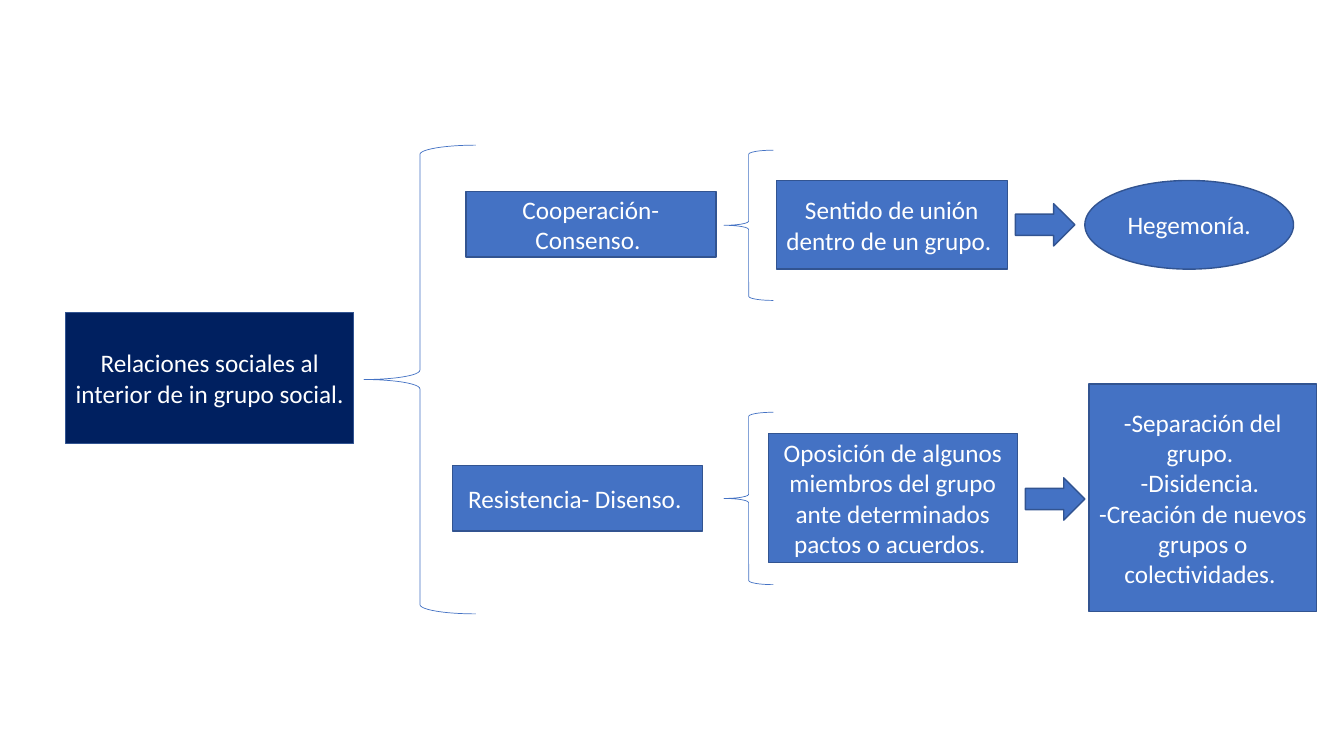
from pptx import Presentation
from pptx.dml.color import RGBColor
from pptx.enum.shapes import MSO_SHAPE
from pptx.enum.text import MSO_ANCHOR, PP_ALIGN
from pptx.util import Pt

PX = 9144
RECT = MSO_SHAPE.RECTANGLE
ELLIPSE = MSO_SHAPE.OVAL
BRACE = MSO_SHAPE.LEFT_BRACE
ARROW = MSO_SHAPE.RIGHT_ARROW
MIDDLE = MSO_ANCHOR.MIDDLE
CENTER = PP_ALIGN.CENTER

NAVY = "002060"
BLUE = "4472C4"
OUTLINE = "325491"
WHITE = "FFFFFF"


def paint(color_format, color):
    color_format.rgb = RGBColor.from_string(color)


def add_figure(slide, kind, box, fill=BLUE, line=OUTLINE, weight=1):
    figure = slide.shapes.add_shape(kind, *(value * PX for value in box))
    figure.shadow.inherit = False
    if fill:
        figure.fill.solid()
        paint(figure.fill.fore_color, fill)
    else:
        figure.fill.background()
    paint(figure.line.color, line)
    figure.line.width = Pt(weight)
    return figure


def write(frame, text, size=18, font="Calibri", color=WHITE, align=CENTER):
    frame.word_wrap = True
    frame.vertical_anchor = MIDDLE
    frame.text = text
    for paragraph in frame.paragraphs:
        paragraph.alignment = align
        paragraph.font.size = Pt(size)
        paragraph.font.name = font
        paint(paragraph.font.color, color)


def add_concept(slide, box, text, kind=RECT, fill=BLUE):
    concept = add_figure(slide, kind, box, fill=fill)
    write(concept.text_frame, text)


def add_brace(slide, box):
    add_figure(slide, BRACE, box, fill=None, line=BLUE, weight=0.5)


def add_arrow(slide, left, top):
    add_figure(slide, ARROW, (left, top, 59, 42))


def main():
    deck = Presentation()
    deck.slide_width = 1333 * PX
    deck.slide_height = 750 * PX
    slide = deck.slides.add_slide(deck.slide_layouts[6])

    add_concept(slide, (65, 310, 286, 130),
                "Relaciones sociales al interior de in grupo social. ", fill=NAVY)
    add_brace(slide, (361, 144, 111, 465))

    add_concept(slide, (462, 190, 248, 65), "Cooperación- Consenso. ")
    add_concept(slide, (449, 462, 248, 65), "Resistencia- Disenso. ")

    add_concept(slide, (770, 179, 229, 88), "Sentido de unión dentro de un grupo. ")
    add_concept(slide, (1076, 179, 207, 88), "Hegemonía. ", kind=ELLIPSE)
    add_brace(slide, (718, 149, 49, 149))
    add_arrow(slide, 1007, 202)

    add_concept(slide, (762, 430, 247, 128),
                "Oposición de algunos miembros del grupo ante determinados pactos o acuerdos. ")
    add_concept(slide, (1080, 381, 226, 226),
                "-Separación del grupo. \n-Disidencia. \n"
                "-Creación de nuevos grupos o colectividades. ")
    add_brace(slide, (718, 409, 49, 171))
    add_arrow(slide, 1017, 474)

    deck.save("out.pptx")


if __name__ == "__main__":
    main()
